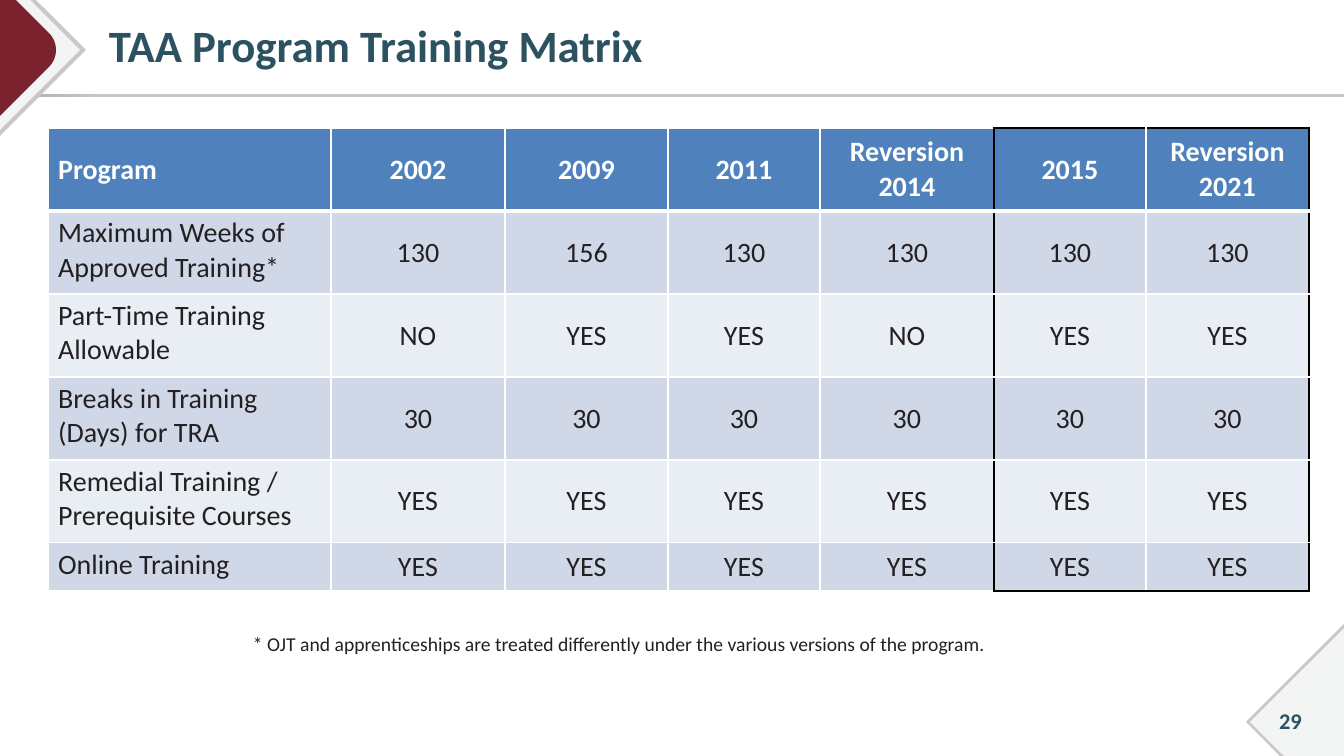
"""Build the TAA Program Training Matrix slide."""
import math

import lxml.etree
import pptx
import pptx.dml.color
import pptx.enum.shapes
import pptx.enum.text
import pptx.oxml.ns
import pptx.util

EMU_PER_PX = 12192000 / 1344
LEFT = pptx.enum.text.PP_ALIGN.LEFT
CENTER = pptx.enum.text.PP_ALIGN.CENTER
TOP = pptx.enum.text.MSO_ANCHOR.TOP
MIDDLE = pptx.enum.text.MSO_ANCHOR.MIDDLE

TEAL, INK, WHITE, BLACK = "2C5261", "242021", "FFFFFF", "000000"
EDGE_GRAY, PALE_GRAY, MAROON = "C8C8C6", "F3F4F4", "7A232F"
HEADER_BLUE, BAND_FILLS = "4F81BD", ("D0D8E8", "E9EDF4")

COLUMN_WIDTHS = [283, 174, 163, 152, 174, 152, 163]
ROW_HEIGHTS = [83] * 5 + [48]
FRAMED_COLUMN = 5
PROGRAMS = [
    ["Program", "2002", "2009", "2011", "Reversion 2014", "2015", "Reversion 2021"],
    ["Maximum Weeks of Approved Training*", "130", "156", "130", "130", "130", "130"],
    ["Part-Time Training Allowable", "NO", "YES", "YES", "NO", "YES", "YES"],
    ["Breaks in Training (Days) for TRA"] + ["30"] * 6,
    ["Remedial Training / Prerequisite Courses"] + ["YES"] * 6,
    ["Online Training"] + ["YES"] * 6,
]


def px(length):
    """Turn pixels into EMU."""
    return pptx.util.Emu(round(length * EMU_PER_PX))


def rgb(code):
    """Turn a hex string into a colour."""
    return pptx.dml.color.RGBColor.from_string(code)


def apply(target, **values):
    """Set each given attribute on the target."""
    for name, value in values.items():
        setattr(target, name, value)


def cell_borders(row, column):
    """Return the colour and width of a cell's left, right, top and bottom edges."""
    thin, header_rule, frame = (WHITE, 1), (WHITE, 3), (BLACK, 2.25)
    last_row, last_column = len(ROW_HEIGHTS) - 1, len(COLUMN_WIDTHS) - 1
    framed = column >= FRAMED_COLUMN
    top = frame if framed and row == 0 else header_rule if row == 1 else thin
    bottom = frame if framed and row == last_row else header_rule if row == 0 else thin
    return {
        "lnL": frame if column == FRAMED_COLUMN else thin,
        "lnR": frame if column in (FRAMED_COLUMN - 1, last_column) else thin,
        "lnT": top,
        "lnB": bottom,
    }


def rounded_corner():
    """Return the outline of the maroon corner with its rounded tip."""
    center_x, center_y, radius = 32, 50, 24
    angles = [math.radians(degrees) for degrees in range(-45, 46, 5)]
    arc = [(center_x + radius * math.cos(a), center_y + radius * math.sin(a)) for a in angles]
    return [(0, 0), (16, 0), *arc, (0, 116)]


class SlideMaker:
    """Hold the style and the current slide."""

    font_name = "Calibri"

    def __init__(self, slide):
        """Start work on a slide."""
        self.shapes = slide.shapes

    def paint(self, shape, color):
        """Give a shape a flat fill with no line or shadow."""
        shape.shadow.inherit = False
        shape.line.fill.background()
        shape.fill.solid()
        shape.fill.fore_color.rgb = rgb(color)

    def rule(self, box, start, end):
        """Draw a thin bar that fades near its left end."""
        bar = self.shapes.add_shape(
            pptx.enum.shapes.MSO_SHAPE.RECTANGLE, *map(px, box))
        self.paint(bar, end)
        bar.fill.gradient()
        bar.fill.gradient_angle = 0
        for stop, color, position in zip(bar.fill.gradient_stops, (start, end), (0, 0.08)):
            stop.color.rgb = rgb(color)
            stop.position = position

    def polygon(self, points, color):
        """Draw a filled closed outline."""
        first, *rest = [(px(x), px(y)) for x, y in points]
        builder = self.shapes.build_freeform(*first, scale=1.0)
        builder.add_line_segments(rest, close=True)
        self.paint(builder.convert_to_shape(), color)

    def fill_frame(self, frame, text, size, color, bold=False, **paragraph_format):
        """Put one formatted paragraph in a text frame."""
        frame.word_wrap = True
        paragraph = frame.paragraphs[0]
        apply(paragraph, **paragraph_format)
        run = paragraph.add_run()
        run.text = text
        apply(run.font, name=self.font_name, size=pptx.util.Pt(size), bold=bold)
        run.font.color.rgb = rgb(color)

    def text(self, box, text, size, color, bold=False, anchor=TOP, inset=10, **paragraph_format):
        """Add a text box."""
        frame = self.shapes.add_textbox(*map(px, box)).text_frame
        apply(frame, vertical_anchor=anchor, margin_left=px(inset), margin_right=px(10),
              margin_top=px(5), margin_bottom=px(5))
        self.fill_frame(frame, text, size, color, bold, **paragraph_format)

    def border(self, cell, edges):
        """Draw the four edges of a cell."""
        properties = cell._tc.get_or_add_tcPr()
        qn = pptx.oxml.ns.qn
        for index, (tag, (color, width)) in enumerate(edges.items()):
            line = lxml.etree.Element(qn("a:" + tag), w=str(pptx.util.Pt(width)))
            fill = lxml.etree.SubElement(line, qn("a:solidFill"))
            lxml.etree.SubElement(fill, qn("a:srgbClr"), val=color)
            properties.insert(index, line)

    def matrix(self, left, top, rows):
        """Add the program table."""
        table = self.shapes.add_table(
            len(rows), len(COLUMN_WIDTHS), px(left), px(top),
            px(sum(COLUMN_WIDTHS)), px(sum(ROW_HEIGHTS))).table
        table.horz_banding = False
        for column, width in zip(table.columns, COLUMN_WIDTHS):
            column.width = px(width)
        for row, height in zip(table.rows, ROW_HEIGHTS):
            row.height = px(height)
        for r, values in enumerate(rows):
            header = r == 0
            for c, value in enumerate(values):
                cell = table.cell(r, c)
                cell.fill.solid()
                cell.fill.fore_color.rgb = rgb(HEADER_BLUE if header else BAND_FILLS[(r - 1) % 2])
                cell.vertical_anchor = MIDDLE if header or c else TOP
                self.fill_frame(cell.text_frame, value, 20, WHITE if header else INK,
                                header, alignment=CENTER if c else LEFT)
                self.border(cell, cell_borders(r, c))


def main():
    """Build and save the slide."""
    deck = pptx.Presentation()
    apply(deck, slide_width=px(1344), slide_height=px(756))
    maker = SlideMaker(deck.slides.add_slide(deck.slide_layouts[6]))

    maker.rule((0, 94, 1344, 3), "ABABA8", EDGE_GRAY)
    maker.polygon([(0, 0), (36, 0), (86, 50), (0, 136)], EDGE_GRAY)
    maker.polygon([(0, 0), (30, 0), (80, 50), (0, 130)], PALE_GRAY)
    maker.polygon(rounded_corner(), MAROON)
    maker.polygon([(1344, 624), (1344, 756), (1280, 756), (1246, 722)], EDGE_GRAY)
    maker.polygon([(1344, 628), (1344, 756), (1284, 756), (1250, 722)], PALE_GRAY)

    maker.text((89, 5, 1222, 87), "TAA Program Training Matrix", 32, TEAL, bold=True,
               anchor=MIDDLE, inset=20, line_spacing=0.9)
    maker.text((1255, 701, 71, 40), "29", 16, TEAL, bold=True,
               anchor=MIDDLE, alignment=CENTER)
    maker.matrix(48, 128, PROGRAMS)
    maker.text((243, 627, 818, 34),
               "* OJT and apprenticeships are treated differently under "
               "the various versions of the program.", 14, INK)
    deck.save("out.pptx")


if __name__ == "__main__":
    main()
